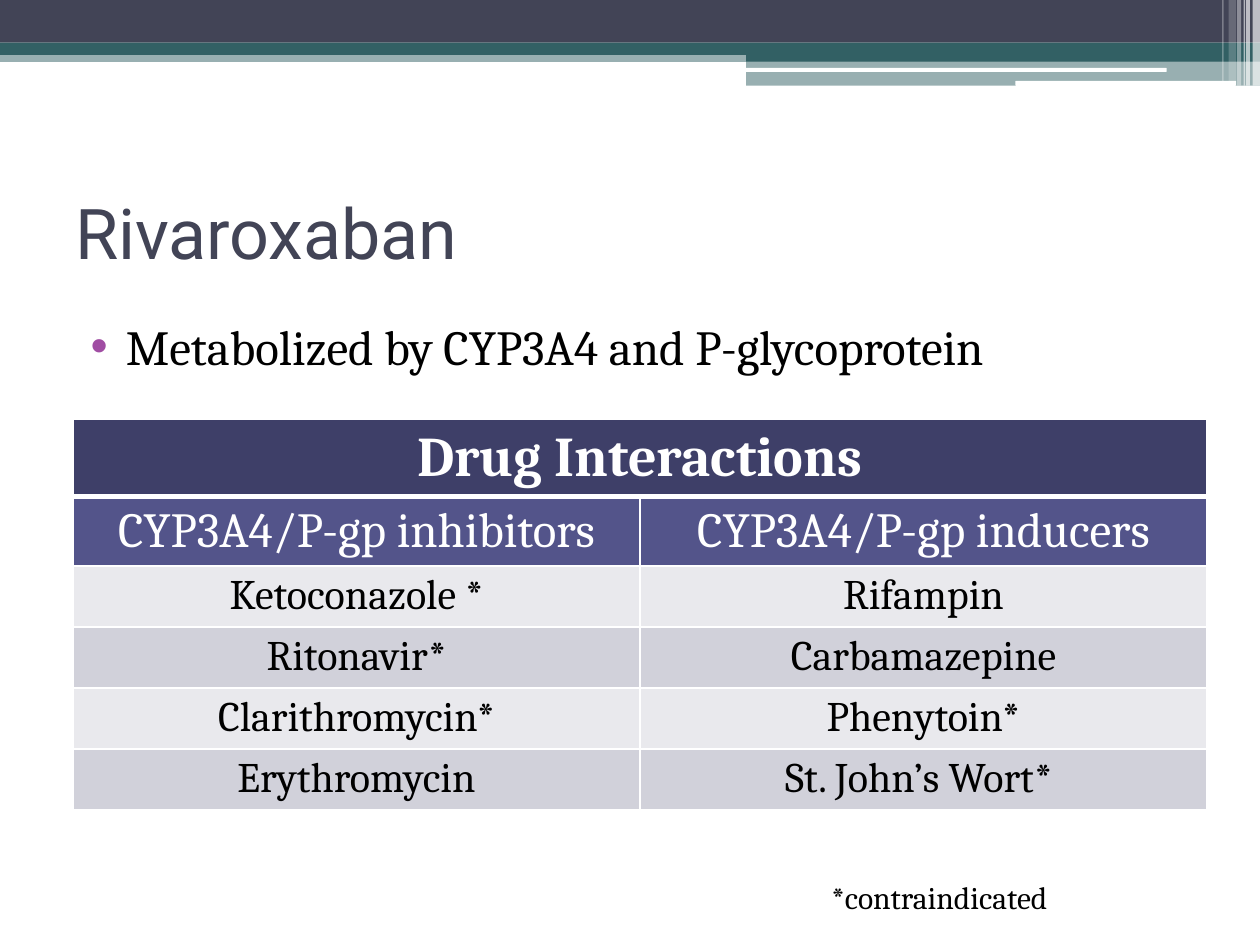
from dataclasses import dataclass

from lxml.etree import SubElement
from pptx import Presentation
from pptx.dml.color import RGBColor
from pptx.enum.shapes import MSO_SHAPE as Preset
from pptx.enum.text import MSO_ANCHOR as Anchor, MSO_AUTO_SIZE as AutoSize, PP_ALIGN as Align
from pptx.oxml import parse_xml
from pptx.oxml.ns import nsdecls, qn
from pptx.util import Cm, Pt

SLATE, TEAL, WHITE, BLACK = "424456", "326064", "FFFFFF", "000000"
WIDTH, HEIGHT = 25.4, 19.05


@dataclass
class Band:
    """A header bar in centimetres, with opacity in percent."""
    left: float
    top: float
    width: float
    height: float
    color: str = TEAL
    opacity: int = 100
    preset: Preset = Preset.RECTANGLE


@dataclass
class TextBlock:
    text: str
    left: float
    top: float
    width: float
    height: float
    size: int
    color: str = BLACK
    font: str = "Cambria"
    anchor: Anchor = Anchor.TOP
    auto_size: AutoSize = AutoSize.NONE


@dataclass
class RowStyle:
    height: float
    size: int
    fill: str
    color: str = BLACK
    bold: bool = False


BANDS = [
    Band(0, 1.02, WIDTH, 0.23, opacity=50),
    Band(0, 0, WIDTH, 0.86, SLATE),
    Band(0, 0.86, WIDTH, 0.25),
    Band(15.04, 0.99, 10.36, 0.25),
    Band(15.04, 1.22, 10.36, 0.51, opacity=50),
    Band(15.01, 1.37, 8.51, 0.08, WHITE, preset=Preset.ROUNDED_RECTANGLE),
    Band(20.47, 1.63, 4.45, 0.1, WHITE, preset=Preset.ROUNDED_RECTANGLE),
]
# left, width, height, opacity
STRIPES = [
    (25.25, 0.15, 1.73, 65), (25.12, 0.08, 1.73, 65), (25.07, 0.03, 1.73, 60),
    (24.94, 0.08, 1.73, 40), (24.77, 0.15, 1.63, 20), (24.64, 0.03, 1.63, 30),
]
BANDS += [Band(left, 0, width, height, WHITE, opacity)
          for left, width, height, opacity in STRIPES]

TITLE = TextBlock("Rivaroxaban", 1.27, 3.18, 22.86, 2.97, 40, SLATE, "Roboto", Anchor.MIDDLE)
BODY = TextBlock("Metabolized by CYP3A4 and P-glycoprotein", 1.27, 6.25, 22.86, 12.01, 28)
FOOTNOTE = TextBlock("*contraindicated", 16.51, 17.58, 7.42, 1.02, 18,
                     auto_size=AutoSize.SHAPE_TO_FIT_TEXT)

INTERACTIONS = [
    ("Drug Interactions", ""),
    ("CYP3A4/P-gp inhibitors", "CYP3A4/P-gp inducers"),
    ("Ketoconazole *", "Rifampin"),
    ("Ritonavir*", "Carbamazepine"),
    ("Clarithromycin*", "Phenytoin*"),
    ("Erythromycin", "St. John’s Wort* "),
]
LIGHT_ROW, DARK_ROW = RowStyle(1.23, 24, "E9E9ED"), RowStyle(1.23, 24, "D1D1DA")
ROW_STYLES = [
    RowStyle(1.52, 32, "3E3F68", WHITE, True),
    RowStyle(1.39, 28, "53548A", WHITE),
] + [LIGHT_ROW, DARK_ROW] * 2


def rgb(value: str) -> RGBColor:
    return RGBColor.from_string(value)


def write(para, text: str, color: str, **formats) -> None:
    span = para.add_run()
    span.text = text
    for name, value in formats.items():
        setattr(span.font, name, value)
    span.font.color.rgb = rgb(color)


def draw_band(page, band: Band) -> None:
    shape = page.shapes.add_shape(band.preset, Cm(band.left), Cm(band.top),
                                  Cm(band.width), Cm(band.height))
    shape.shadow.inherit = False
    shape.line.fill.background()
    shape.fill.solid()
    shape.fill.fore_color.rgb = rgb(band.color)
    if band.opacity < 100:
        color = shape.fill._xPr.find(f".//{qn('a:srgbClr')}")
        SubElement(color, qn("a:alpha"), val=str(band.opacity * 1000))


def draw_text(page, block: TextBlock):
    """Add the text box and return its paragraph."""
    box = page.shapes.add_textbox(Cm(block.left), Cm(block.top),
                                  Cm(block.width), Cm(block.height))
    frame_formats = {"word_wrap": True, "auto_size": block.auto_size,
                     "vertical_anchor": block.anchor}
    for name, value in frame_formats.items():
        setattr(box.text_frame, name, value)
    para = box.text_frame.paragraphs[0]
    write(para, block.text, block.color, name=block.font, size=Pt(block.size))
    return para


def add_bullet(para, color: str) -> None:
    para.space_before = Pt(3)
    properties = para._p.get_or_add_pPr()
    properties.set("marL", str(Cm(1.02)))
    properties.set("indent", str(Cm(-0.71)))
    bullet_color = SubElement(properties, qn("a:buClr"))
    SubElement(bullet_color, qn("a:srgbClr"), val=color)
    SubElement(properties, qn("a:buFont"), typeface="Arial")
    SubElement(properties, qn("a:buChar"), char="•")


def set_borders(cell, widths: dict[str, int]) -> None:
    """Draw white borders, keyed by side, ahead of the cell's fill."""
    properties = cell._tc.get_or_add_tcPr()
    for index, (side, points) in enumerate(widths.items()):
        properties.insert(index, parse_xml(
            f'<a:ln{side} {nsdecls("a")} w="{Pt(points)}"><a:solidFill>'
            f'<a:srgbClr val="{WHITE}"/></a:solidFill></a:ln{side}>'))


def draw_table(page) -> None:
    height = sum(style.height for style in ROW_STYLES)
    table = page.shapes.add_table(len(INTERACTIONS), 2, Cm(1.47), Cm(8.46),
                                  Cm(22.86), Cm(height)).table
    for index, (texts, style) in enumerate(zip(INTERACTIONS, ROW_STYLES)):
        table.rows[index].height = Cm(style.height)
        for cell, text in zip(table.rows[index].cells, texts):
            cell.fill.solid()
            cell.fill.fore_color.rgb = rgb(style.fill)
            set_borders(cell, {"L": 1, "R": 1, "T": 3 if index == 1 else 1,
                               "B": 3 if index == 0 else 1})
            if text:
                para = cell.text_frame.paragraphs[0]
                para.alignment = Align.CENTER
                write(para, text, style.color, name="Cambria",
                      size=Pt(style.size), bold=style.bold)
    table.cell(0, 0).merge(table.cell(0, 1))


def main() -> None:
    deck = Presentation()
    deck.slide_width, deck.slide_height = Cm(WIDTH), Cm(HEIGHT)
    page = deck.slides.add_slide(deck.slide_layouts[6])
    for band in BANDS:
        draw_band(page, band)
    draw_text(page, TITLE)
    add_bullet(draw_text(page, BODY), "A04DA3")
    draw_table(page)
    draw_text(page, FOOTNOTE)
    deck.save("out.pptx")


if __name__ == "__main__":
    main()
